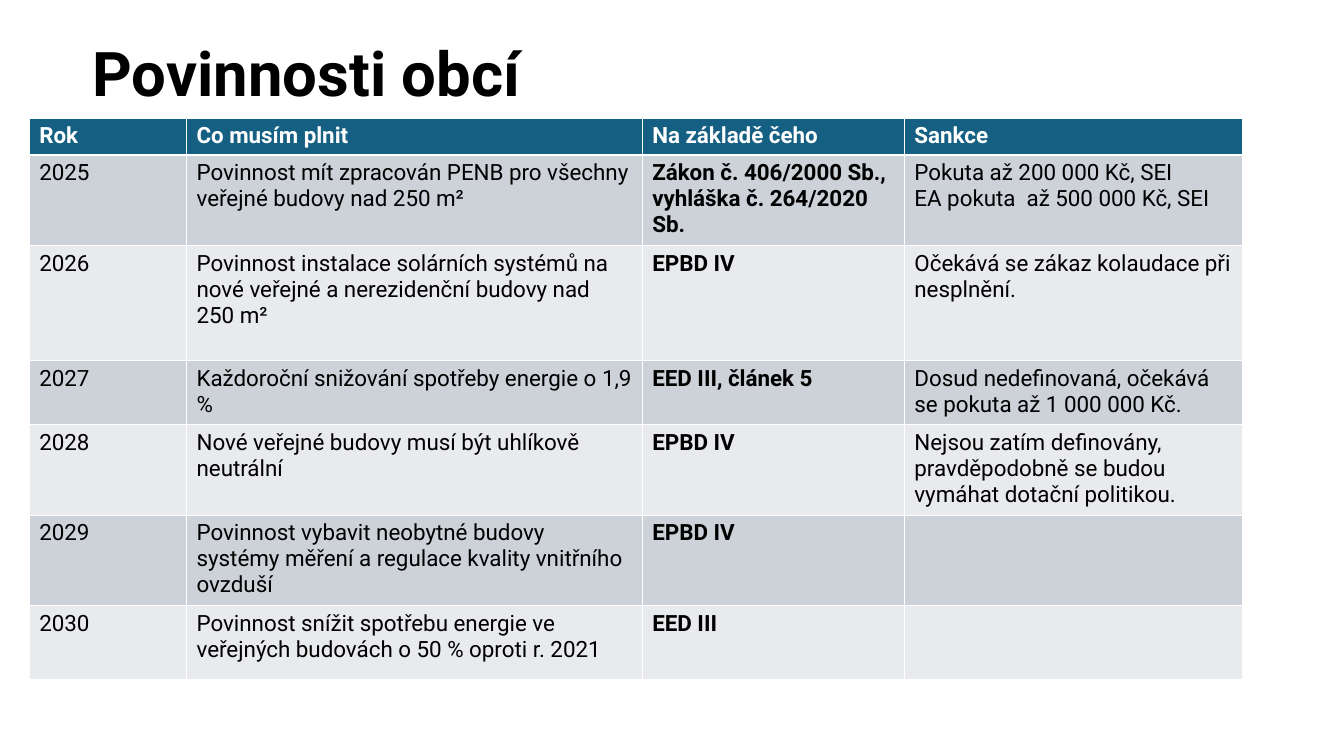
from pptx import Presentation
from pptx.dml.color import RGBColor
from pptx.enum import text
from pptx.util import Inches, Pt


def style_run(run, size, color, bold):
    run.font.name = "Roboto"
    run.font.size = Pt(size)
    run.font.bold = bold
    run.font.color.rgb = RGBColor.from_string(color)


deck = Presentation()
deck.slide_width = Inches(13.33)
deck.slide_height = Inches(7.5)
slide = deck.slides.add_slide(deck.slide_layouts[6])

heading = slide.shapes.add_textbox(
    Inches(0.82), Inches(0.03), Inches(11.5), Inches(1.45)
).text_frame
heading.word_wrap = True
heading.vertical_anchor = text.MSO_ANCHOR.MIDDLE
heading.text = "Povinnosti obcí"
heading.paragraphs[0].line_spacing = 0.9
style_run(heading.paragraphs[0].runs[0], 44, "000000", True)

duties = [
    ("Rok", "Co musím plnit", "Na základě čeho", "Sankce"),
    ("2025", "Povinnost mít zpracován PENB pro všechny veřejné budovy nad 250 m²",
     "Zákon č. 406/2000 Sb., vyhláška č. 264/2020 Sb.",
     "Pokuta až 200 000 Kč, SEI\nEA pokuta  až 500 000 Kč, SEI"),
    ("2026", "Povinnost instalace solárních systémů na nové veřejné a nerezidenční budovy nad 250 m²",
     "EPBD IV", "Očekává se zákaz kolaudace při nesplnění."),
    ("2027", "Každoroční snižování spotřeby energie o 1,9 %",
     "EED III, článek 5", "Dosud nedefinovaná, očekává se pokuta až 1 000 000 Kč."),
    ("2028", "Nové veřejné budovy musí být uhlíkově neutrální",
     "EPBD IV", "Nejsou zatím definovány, pravděpodobně se budou vymáhat dotační politikou."),
    ("2029", "Povinnost vybavit neobytné budovy systémy měření a regulace kvality vnitřního ovzduší",
     "EPBD IV", ""),
    ("2030", "Povinnost snížit spotřebu energie ve veřejných budovách o 50 % oproti r. 2021",
     "EED III", ""),
]
column_widths = [1.56, 4.52, 2.6, 3.35]
row_heights = [0.35, 0.87, 1.14, 0.62, 0.87, 0.87, 0.73]
basis_column = 2

schedule = slide.shapes.add_table(
    len(duties), len(column_widths), Inches(0.29), Inches(1.17),
    Inches(sum(column_widths)), Inches(sum(row_heights))
).table
for column, width in zip(schedule.columns, column_widths):
    column.width = Inches(width)

for row_index, (duty, height) in enumerate(zip(duties, row_heights)):
    schedule.rows[row_index].height = Inches(height)
    is_header = row_index == 0
    band = "156082" if is_header else ("E8EAED", "CCD2D8")[row_index % 2]
    for column_index, wording in enumerate(duty):
        cell = schedule.cell(row_index, column_index)
        cell.fill.solid()
        cell.fill.fore_color.rgb = RGBColor.from_string(band)
        cell.text_frame.text = wording
        for paragraph in cell.text_frame.paragraphs:
            for run in paragraph.runs:
                style_run(run, 16, "FFFFFF" if is_header else "000000",
                          is_header or column_index == basis_column)

deck.save("out.pptx")
